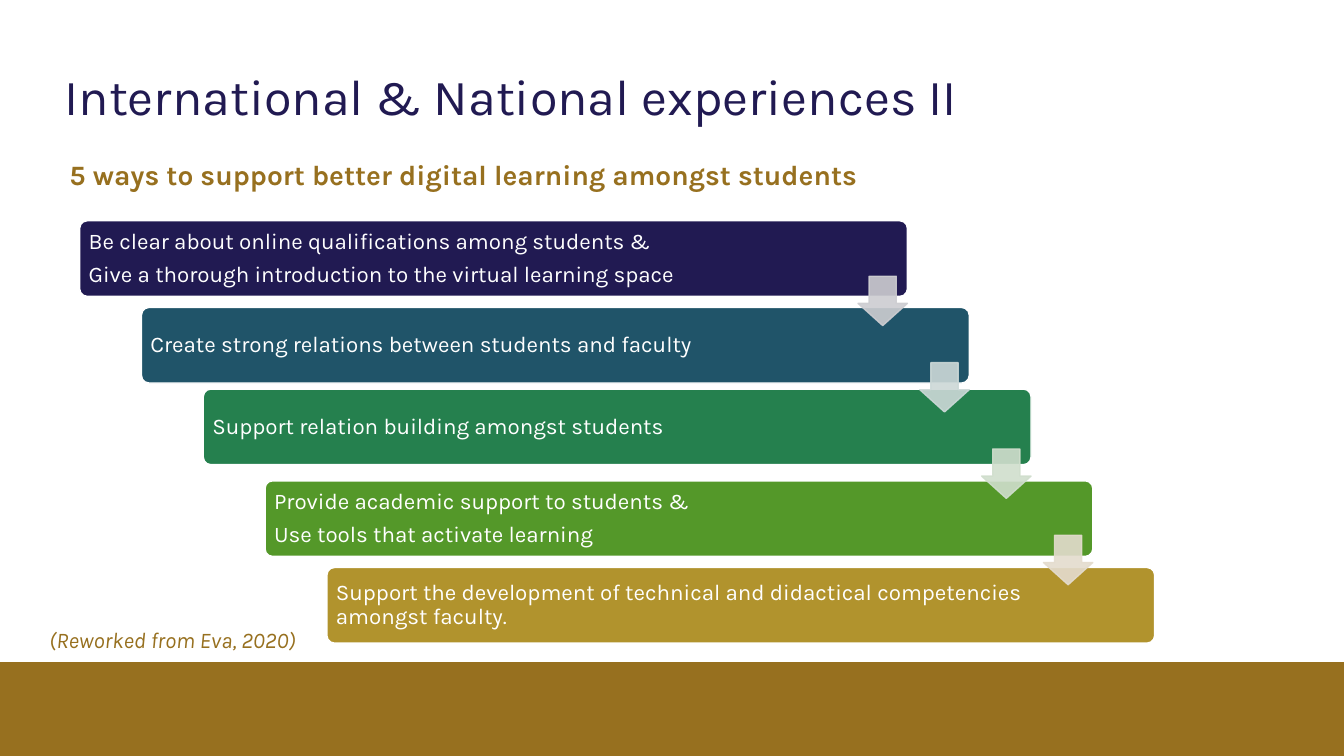
"""Build a slide with five staggered steps towards better digital learning."""
from dataclasses import dataclass

from lxml import etree
from pptx import Presentation
from pptx.dml.color import RGBColor
from pptx.enum.shapes import MSO_SHAPE
from pptx.enum.text import MSO_ANCHOR, MSO_AUTO_SIZE
from pptx.oxml.ns import qn
from pptx.util import Inches, Pt

RECT = MSO_SHAPE.RECTANGLE
ROUND = MSO_SHAPE.ROUNDED_RECTANGLE
ARROW = MSO_SHAPE.DOWN_ARROW
TOP, MIDDLE = MSO_ANCHOR.TOP, MSO_ANCHOR.MIDDLE
GROW = MSO_AUTO_SIZE.SHAPE_TO_FIT_TEXT

FONT = "Karla"
WHITE = RGBColor(0xFF, 0xFF, 0xFF)
NAVY = RGBColor(0x21, 0x1A, 0x52)
TEAL = RGBColor(0x20, 0x54, 0x69)
GREEN = RGBColor(0x25, 0x80, 0x4E)
LIME = RGBColor(0x54, 0x98, 0x29)
GOLD = RGBColor(0xB1, 0x93, 0x2D)
BRONZE = RGBColor(0x97, 0x70, 0x1F)
GREY = RGBColor(0xCD, 0xCD, 0xD1)
MIST = RGBColor(0xCC, 0xD8, 0xD7)
SAGE = RGBColor(0xD0, 0xDE, 0xCD)
SAND = RGBColor(0xE4, 0xDC, 0xCE)

LEFT, SHIFT = 0.79, 0.613
WIDTH, HEIGHT = 8.21, 0.75
FIRST, DROP, HEAD = 2.74, 0.857, 0.49


@dataclass
class Step:
    top: float
    fill: RGBColor
    text: str
    room: float = 7.07


@dataclass
class Label:
    text: str
    box: tuple[float, float, float, float]
    size: float
    color: RGBColor
    inset: tuple[float, float, float, float] = (0.1, 0.05, 0.1, 0.05)
    anchor: MSO_ANCHOR = TOP
    line: float = 1.0
    after: float = 0
    bold: bool = False
    italic: bool = False
    grow: bool = False


STEPS = [
    Step(2.19, NAVY, "Be clear about online qualifications among students &\n"
         "Give a thorough introduction to the virtual learning space", 7.31),
    Step(3.05, TEAL, "Create strong relations between students and faculty"),
    Step(3.86, GREEN, "Support relation building amongst students"),
    Step(4.77, LIME, "Provide academic support to students &\n"
         "Use tools that activate learning"),
    Step(5.63, GOLD, "Support the development of technical and didactical "
         "competencies amongst faculty."),
]
HEADS = [GREY, MIST, SAGE, SAND]

TITLE = Label("International & National experiences II", (0.64, 0.5, 10.67, 0.99),
              36, NAVY, inset=(0, 0.21, 0, 0), line=0.9)
NOTES = [
    Label("(Reworked from Eva, 2020)", (0.39, 6.16, 8.44, 0.37), 16, BRONZE,
          italic=True, grow=True),
    Label("5 ways to support better digital learning amongst students",
          (0.59, 1.51, 12.74, 0.44), 20, BRONZE, bold=True, grow=True),
]


def draw(slide, kind, box: tuple, fill: RGBColor, edge: RGBColor | None = None):
    """Add a flat shape, with a thin line if an edge colour is given."""
    shape = slide.shapes.add_shape(kind, *map(Inches, box))
    shape.shadow.inherit = False
    shape.fill.solid()
    shape.fill.fore_color.rgb = fill
    if edge is None:
        shape.line.fill.background()
    else:
        shape.line.color.rgb = edge
        shape.line.width = Pt(1)
    return shape


def fade(shape, share: int) -> None:
    """Make the fill and line opaque only to the given percentage."""
    for color in shape.element.spPr.iter(qn("a:srgbClr")):
        etree.SubElement(color, qn("a:alpha")).set("val", str(share * 1000))


def write(slide, label: Label) -> None:
    """Add a text box for a label."""
    frame = slide.shapes.add_textbox(*map(Inches, label.box)).text_frame
    frame.word_wrap = True
    frame.vertical_anchor = label.anchor
    if label.grow:
        frame.auto_size = GROW
    (frame.margin_left, frame.margin_top,
     frame.margin_right, frame.margin_bottom) = map(Inches, label.inset)
    frame.text = label.text
    for para in frame.paragraphs:
        para.line_spacing = label.line
        para.space_after = Pt(label.after)
        for run in para.runs:
            font = run.font
            font.name, font.size = FONT, Pt(label.size)
            font.bold, font.italic = label.bold, label.italic
            font.color.rgb = label.color


def main() -> None:
    """Draw the slide and save it."""
    deck = Presentation()
    deck.slide_width, deck.slide_height = Inches(13.33), Inches(7.5)
    slide = deck.slides.add_slide(deck.slide_layouts[6])

    draw(slide, RECT, (0, 6.57, 13.33, 0.93), BRONZE)
    write(slide, TITLE)
    for i, step in enumerate(STEPS):
        left = LEFT + i * SHIFT
        bar = draw(slide, ROUND, (left, step.top, WIDTH, HEIGHT), step.fill, WHITE)
        bar.adjustments[0] = 0.1
        write(slide, Label(step.text, (left + 0.02, step.top + 0.02, step.room, 0.71),
                           16, WHITE, (0.07,) * 4, MIDDLE, 0.9, 6))
    for i, color in enumerate(HEADS):
        left = LEFT + WIDTH - HEAD + i * SHIFT
        head = draw(slide, ARROW, (left, FIRST + i * DROP, HEAD, HEAD), color, color)
        head.adjustments[0], head.adjustments[1] = 0.55, 0.45
        fade(head, 90)
    for note in NOTES:
        write(slide, note)
    deck.save("out.pptx")


if __name__ == "__main__":
    main()
